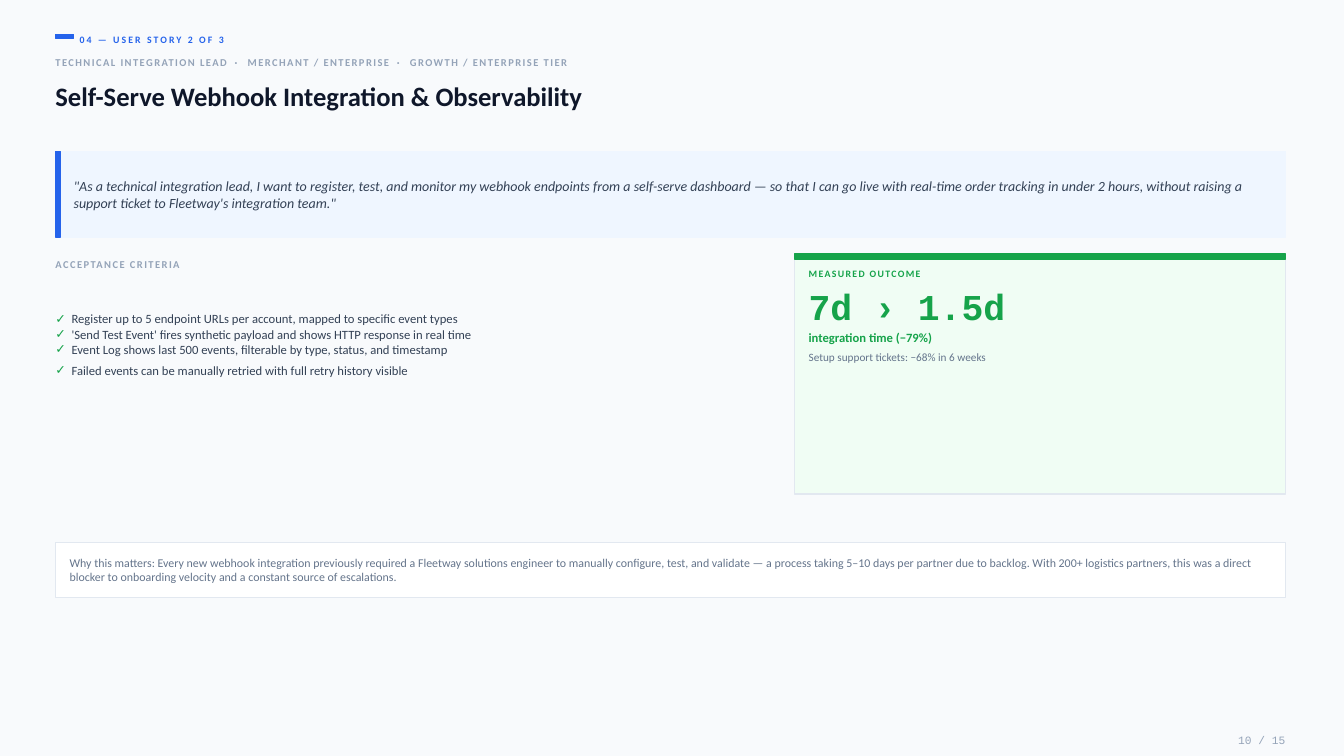
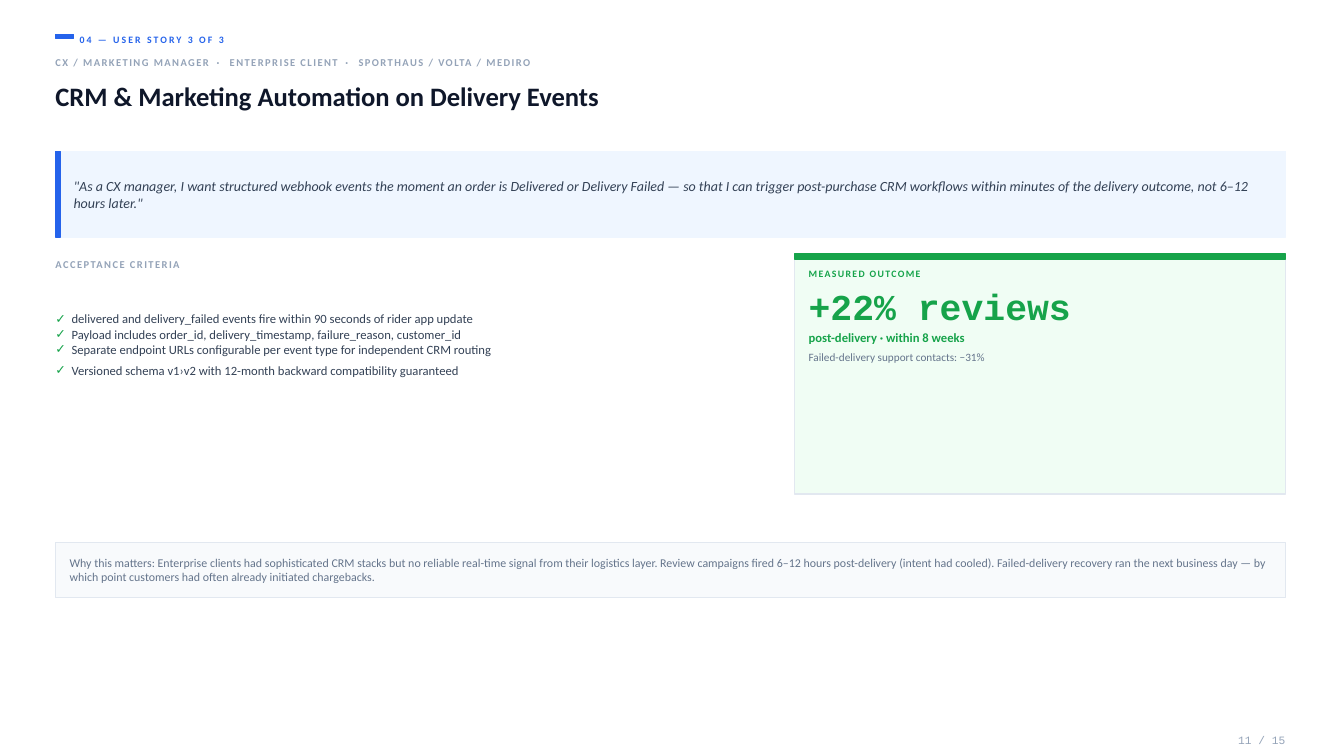
"""Build two user story slides with criteria, a measured outcome and context."""
from dataclasses import dataclass

from lxml import etree
from pptx import Presentation
from pptx.dml.color import RGBColor
from pptx.enum.shapes import MSO_SHAPE
from pptx.enum.text import MSO_ANCHOR, MSO_AUTO_SIZE, PP_ALIGN
from pptx.oxml.ns import qn
from pptx.util import Inches, Pt

RECTANGLE = MSO_SHAPE.RECTANGLE
MIDDLE = MSO_ANCHOR.MIDDLE
NO_AUTOFIT = MSO_AUTO_SIZE.NONE
LEFT = PP_ALIGN.LEFT
RIGHT = PP_ALIGN.RIGHT

COLORS = {
    "blue": "2563EB",
    "pale blue": "EFF6FF",
    "green": "16A34A",
    "pale green": "F0FDF4",
    "ink": "0F172A",
    "text": "334155",
    "muted": "64748B",
    "label": "94A3B8",
    "border": "E2E8F0",
    "mist": "F8FAFC",
    "white": "FFFFFF",
}
BODY_FONT = "Calibri"
MONO_FONT = "Courier New"
TITLE_ONLY = 5
SLIDE_COUNT = 15
STORY_COUNT = 3

MARGIN = 0.55
CONTENT_WIDTH = 12.2
PADDING = 0.14
QUOTE_TOP, QUOTE_HEIGHT = 1.5, 0.85
COLUMN_TOP, COLUMN_WIDTH = 2.52, 7.08
CARD_LEFT, CARD_WIDTH, CARD_HEIGHT = 7.88, 4.87, 2.38
CONTEXT_TOP, CONTEXT_HEIGHT = 5.38, 0.55
BAR = 0.05


@dataclass
class Story:
    """Hold the content of one user story slide."""

    page: int
    number: int
    background: str
    context_fill: str
    audience: tuple
    title: str
    quote: str
    criteria: tuple
    outcome: str
    outcome_label: str
    outcome_detail: str
    context: str


STORIES = (
    Story(
        page=10,
        number=2,
        background="mist",
        context_fill="white",
        audience=("TECHNICAL INTEGRATION LEAD", "MERCHANT / ENTERPRISE",
                  "GROWTH / ENTERPRISE TIER"),
        title="Self-Serve Webhook Integration & Observability",
        quote='"As a technical integration lead, I want to register, test, and monitor my '
              "webhook endpoints from a self-serve dashboard — so that I can go live with "
              "real-time order tracking in under 2 hours, without raising a support ticket "
              "to Fleetway's integration team.\"",
        criteria=(
            "Register up to 5 endpoint URLs per account, mapped to specific event types",
            "'Send Test Event' fires synthetic payload and shows HTTP response in real time",
            "Event Log shows last 500 events, filterable by type, status, and timestamp",
            "Failed events can be manually retried with full retry history visible",
        ),
        outcome="7d › 1.5d",
        outcome_label="integration time (−79%)",
        outcome_detail="Setup support tickets: −68% in 6 weeks",
        context="Why this matters: Every new webhook integration previously required a "
                "Fleetway solutions engineer to manually configure, test, and validate — a "
                "process taking 5–10 days per partner due to backlog. With 200+ logistics "
                "partners, this was a direct blocker to onboarding velocity and a constant "
                "source of escalations.",
    ),
    Story(
        page=11,
        number=3,
        background="white",
        context_fill="mist",
        audience=("CX / MARKETING MANAGER", "ENTERPRISE CLIENT",
                  "SPORTHAUS / VOLTA / MEDIRO"),
        title="CRM & Marketing Automation on Delivery Events",
        quote='"As a CX manager, I want structured webhook events the moment an order is '
              "Delivered or Delivery Failed — so that I can trigger post-purchase CRM "
              'workflows within minutes of the delivery outcome, not 6–12 hours later."',
        criteria=(
            "delivered and delivery_failed events fire within 90 seconds of rider app update",
            "Payload includes order_id, delivery_timestamp, failure_reason, customer_id",
            "Separate endpoint URLs configurable per event type for independent CRM routing",
            "Versioned schema v1›v2 with 12-month backward compatibility guaranteed",
        ),
        outcome="+22% reviews",
        outcome_label="post-delivery · within 8 weeks",
        outcome_detail="Failed-delivery support contacts: −31%",
        context="Why this matters: Enterprise clients had sophisticated CRM stacks but no "
                "reliable real-time signal from their logistics layer. Review campaigns "
                "fired 6–12 hours post-delivery (intent had cooled). Failed-delivery "
                "recovery ran the next business day — by which point customers had often "
                "already initiated chargebacks.",
    ),
)


def rgb(name):
    """Return the named palette colour."""
    return RGBColor.from_string(COLORS[name])


def add_rectangle(slide, left, top, width, height, fill, line=None):
    """Add a flat rectangle, outlined in its fill colour by default."""
    shape = slide.shapes.add_shape(
        RECTANGLE, Inches(left), Inches(top), Inches(width), Inches(height))
    shape.shadow.inherit = False
    shape.fill.solid()
    shape.fill.fore_color.rgb = rgb(fill)
    shape.line.color.rgb = rgb(line or fill)
    shape.line.width = Pt(1)


def prepare_frame(shape):
    """Remove the insets, centre the text vertically and return the frame."""
    frame = shape.text_frame
    frame.margin_left = frame.margin_top = frame.margin_right = frame.margin_bottom = 0
    frame.word_wrap = True
    frame.auto_size = NO_AUTOFIT
    frame.vertical_anchor = MIDDLE
    return frame


def add_frame(slide, left, top, width, height):
    """Add a text box and return its prepared frame."""
    return prepare_frame(slide.shapes.add_textbox(
        Inches(left), Inches(top), Inches(width), Inches(height)))


def add_run(paragraph, text, size, color, bold=False, italic=False,
            font=BODY_FONT, spacing=0):
    """Append a formatted run, with letter spacing in points."""
    run = paragraph.add_run()
    run.text = text
    run.font.name = font
    run.font.size = Pt(size)
    run.font.bold = bold
    run.font.italic = italic
    run.font.color.rgb = rgb(color)
    if spacing:
        run._r.get_or_add_rPr().set("spc", str(round(spacing * 100)))


def add_text(slide, left, top, width, height, text, size, color, align=LEFT, **style):
    """Add a text box with one formatted run."""
    paragraph = add_frame(slide, left, top, width, height).paragraphs[0]
    paragraph.alignment = align
    add_run(paragraph, text, size, color, **style)


def add_check_bullet(paragraph):
    """Give a paragraph a green check mark with a hanging indent."""
    properties = paragraph._p.get_or_add_pPr()
    indent = Inches(0.16)
    properties.set("marL", str(indent))
    properties.set("indent", str(-indent))
    bullet_color = etree.SubElement(properties, qn("a:buClr"))
    etree.SubElement(bullet_color, qn("a:srgbClr"), val=COLORS["green"])
    etree.SubElement(properties, qn("a:buFont"), typeface=BODY_FONT)
    etree.SubElement(properties, qn("a:buChar"), char="✓")


def add_header(slide, story):
    """Add the section tag, the audience line and the slide title."""
    add_rectangle(slide, MARGIN, 0.34, 0.18, 0.04, "blue")
    add_text(slide, 0.79, 0.3, 11.96, 0.18,
             f"04 — USER STORY {story.number} OF {STORY_COUNT}", 7, "blue",
             bold=True, spacing=1.5)
    audience = add_frame(slide, MARGIN, 0.52, CONTENT_WIDTH, 0.2).paragraphs[0]
    for index, part in enumerate(story.audience):
        if index:
            add_run(audience, " · ", 7.5, "label", bold=True, spacing=2.8)
        add_run(audience, part, 7.5, "label", bold=True, spacing=1)
    title = slide.shapes.title
    title.left, title.top = Inches(MARGIN), Inches(0.75)
    title.width, title.height = Inches(CONTENT_WIDTH), Inches(0.4)
    paragraph = prepare_frame(title).paragraphs[0]
    paragraph.alignment = LEFT
    add_run(paragraph, story.title, 19, "ink", bold=True)


def add_quote(slide, quote):
    """Add the story quote on a pale band with a blue edge."""
    add_rectangle(slide, MARGIN, QUOTE_TOP, CONTENT_WIDTH, QUOTE_HEIGHT, "pale blue")
    add_rectangle(slide, MARGIN, QUOTE_TOP, BAR, QUOTE_HEIGHT, "blue")
    add_text(slide, 0.73, 1.57, 11.92, 0.72, quote, 10, "text", italic=True)


def add_criteria(slide, criteria):
    """Add the labelled checklist, with the last item set slightly apart."""
    add_text(slide, MARGIN, COLUMN_TOP, COLUMN_WIDTH, 0.2, "ACCEPTANCE CRITERIA",
             7.5, "label", bold=True, spacing=1)
    frame = add_frame(slide, MARGIN, 2.78, COLUMN_WIDTH, 1.28)
    for index, criterion in enumerate(criteria):
        paragraph = frame.add_paragraph() if index else frame.paragraphs[0]
        add_check_bullet(paragraph)
        add_run(paragraph, criterion, 9, "text")
    paragraph.space_before = Pt(4.4)


def add_outcome(slide, story):
    """Add the green card with the measured outcome."""
    add_rectangle(slide, CARD_LEFT, COLUMN_TOP, CARD_WIDTH, CARD_HEIGHT,
                  "pale green", "border")
    add_rectangle(slide, CARD_LEFT, COLUMN_TOP, CARD_WIDTH, BAR, "green")
    lines = (
        (2.62, 0.18, "MEASURED OUTCOME", 7, "green", {"bold": True, "spacing": 1}),
        (2.82, 0.42, story.outcome, 26, "green", {"bold": True, "font": MONO_FONT}),
        (3.25, 0.2, story.outcome_label, 9, "green", {"bold": True}),
        (3.45, 0.18, story.outcome_detail, 8, "muted", {}),
    )
    for top, height, text, size, color, style in lines:
        add_text(slide, CARD_LEFT + PADDING, top, CARD_WIDTH - 2 * PADDING, height,
                 text, size, color, **style)


def add_context(slide, story):
    """Add the outlined box that explains why the story matters."""
    add_rectangle(slide, MARGIN, CONTEXT_TOP, CONTENT_WIDTH, CONTEXT_HEIGHT,
                  story.context_fill, "border")
    add_text(slide, MARGIN + PADDING, CONTEXT_TOP + 0.06, CONTENT_WIDTH - 2 * PADDING,
             CONTEXT_HEIGHT - 0.12, story.context, 8.5, "muted")


def add_story_slide(presentation, story):
    """Add one complete user story slide."""
    slide = presentation.slides.add_slide(presentation.slide_layouts[TITLE_ONLY])
    slide.background.fill.solid()
    slide.background.fill.fore_color.rgb = rgb(story.background)
    add_header(slide, story)
    add_quote(slide, story.quote)
    add_criteria(slide, story.criteria)
    add_outcome(slide, story)
    add_context(slide, story)
    add_text(slide, 12.15, 7.25, 0.6, 0.18, f"{story.page} / {SLIDE_COUNT}", 8, "label",
             align=RIGHT, font=MONO_FONT)


def main():
    """Build and save the presentation."""
    presentation = Presentation()
    presentation.slide_width = Inches(13.33)
    presentation.slide_height = Inches(7.5)
    for story in STORIES:
        add_story_slide(presentation, story)
    presentation.save("out.pptx")


if __name__ == "__main__":
    main()
